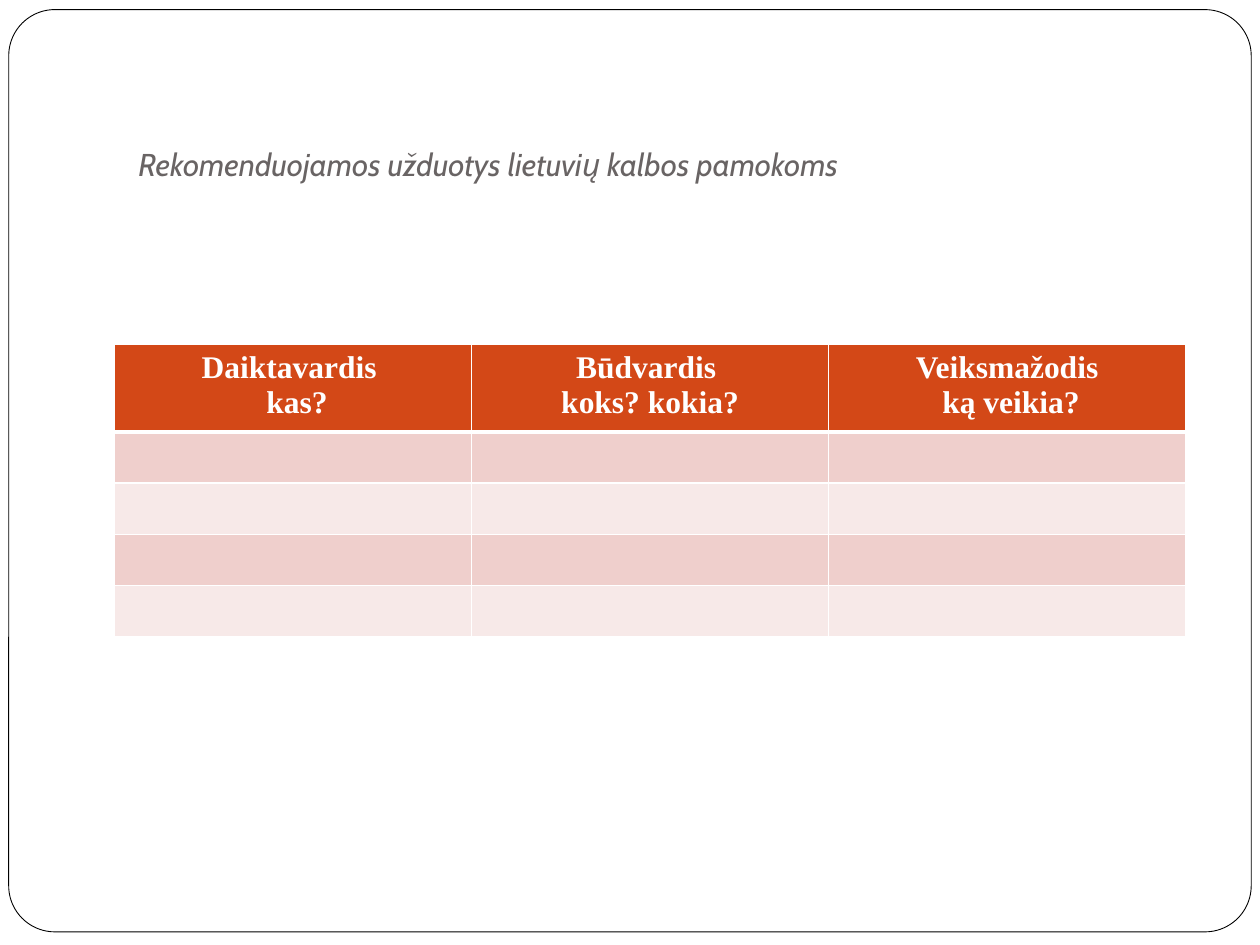
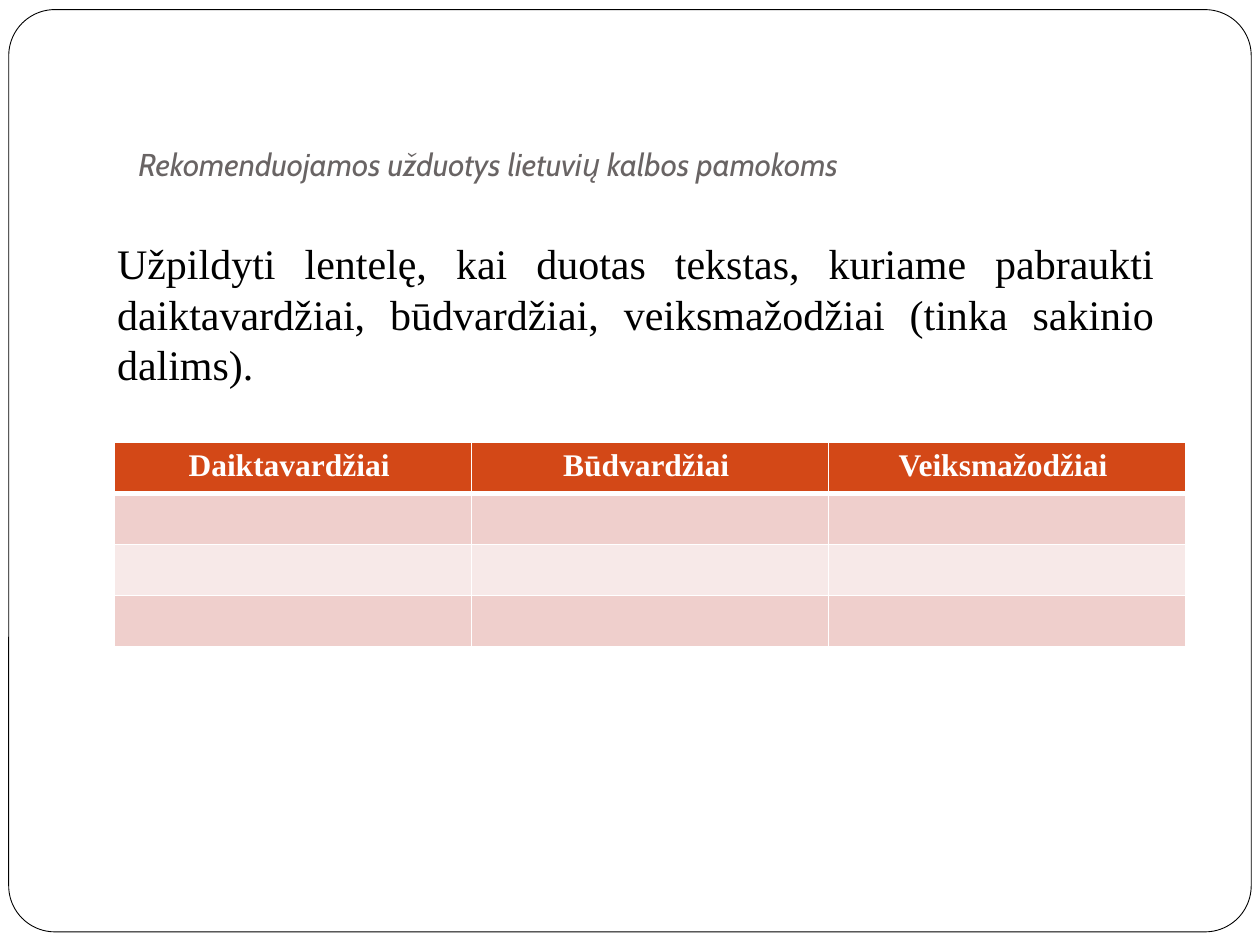
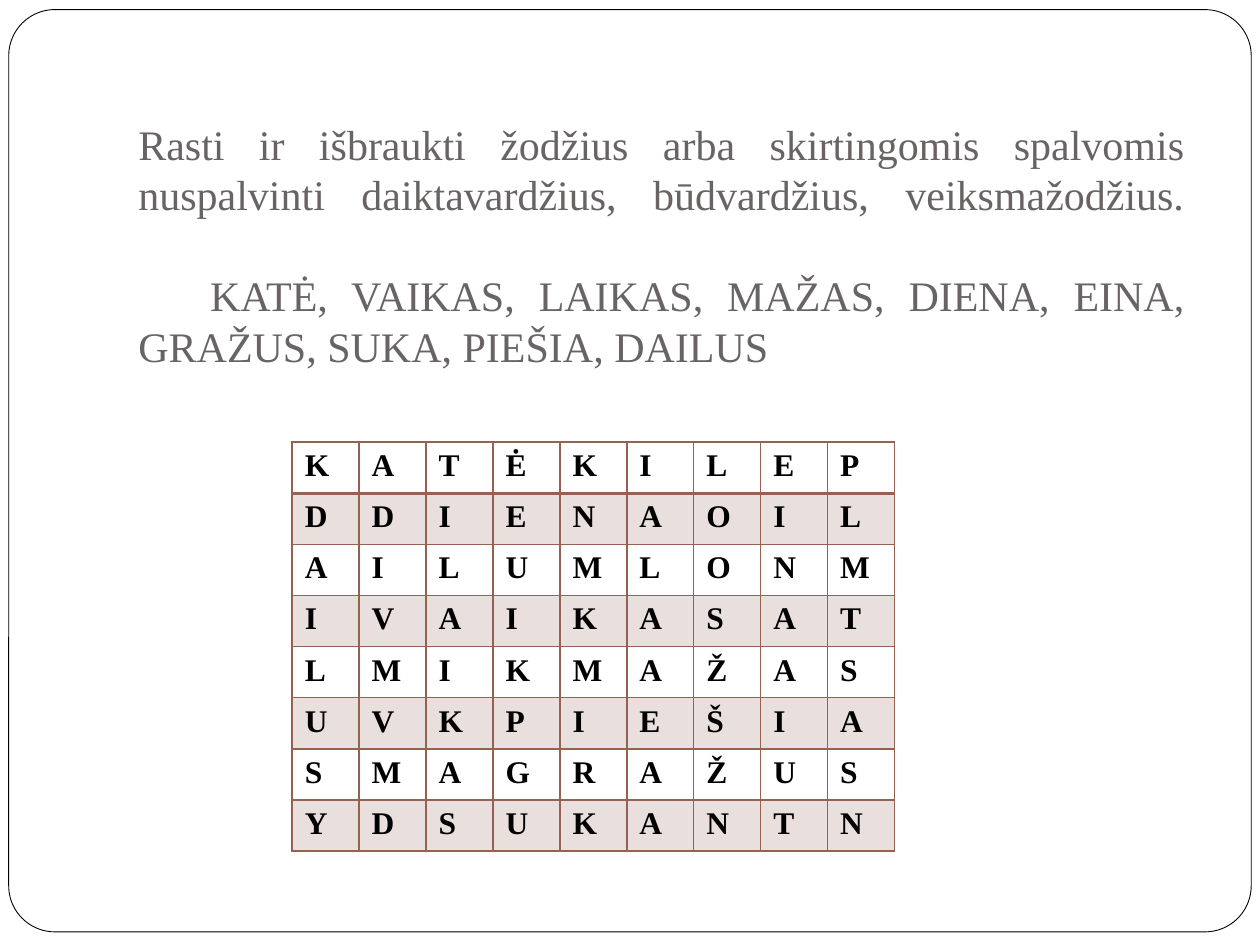
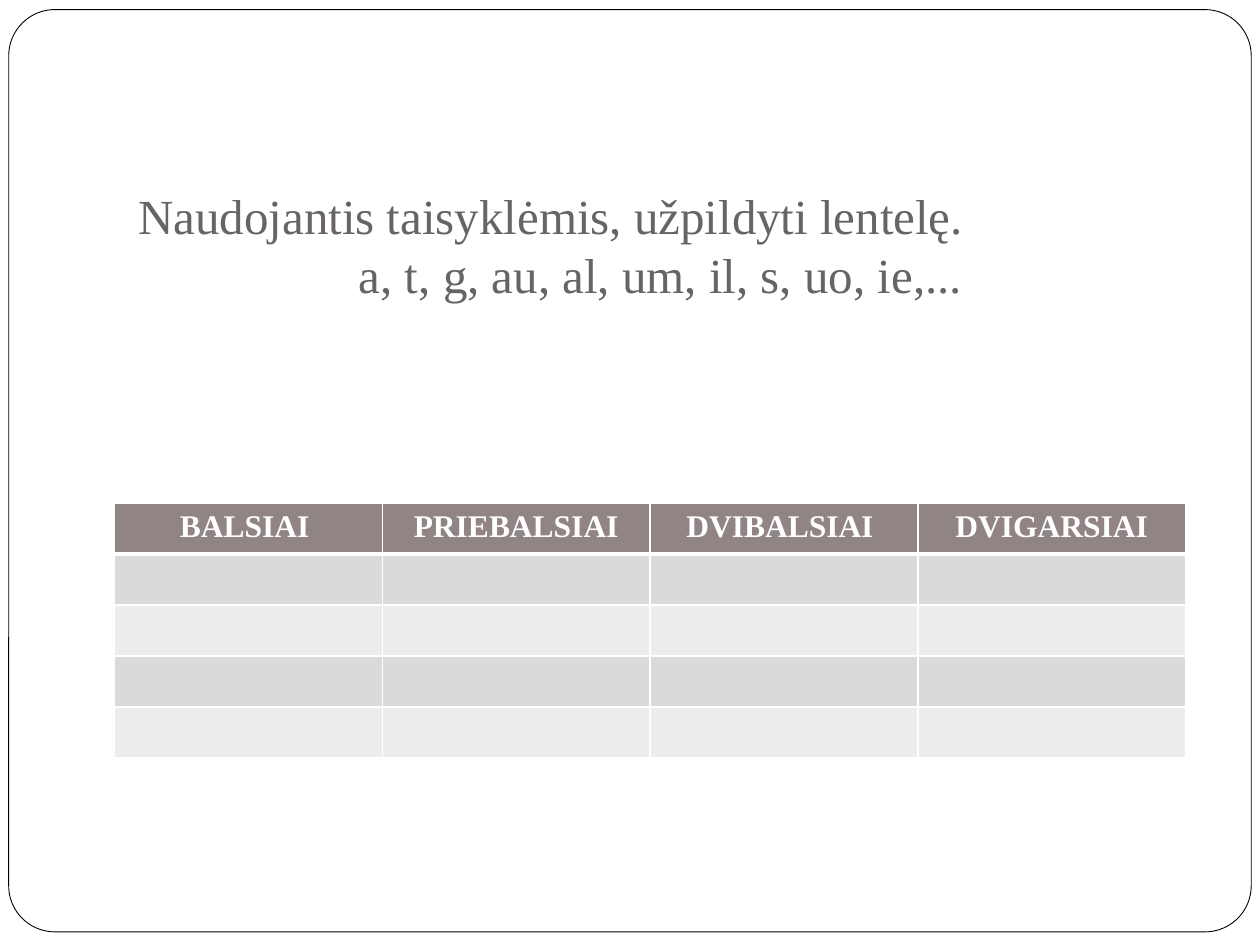
"""Four Lithuanian grammar exercise slides with titles and tables."""
from copy import deepcopy

from pptx import Presentation
from pptx import util as u
from pptx.dml.color import RGBColor
from pptx.enum import shapes, text
from pptx.oxml import ns, xmlchemy

Pt = u.Pt
AL = text.PP_ALIGN
SERIF = "Times New Roman"
COLORS = {
    "white": "FFFFFF", "black": "000000", "title": "696464",
    "orange": "D34817", "rose": "EFCFCC", "pale_rose": "F7E9E8",
    "taupe": "918485", "gray": "DCD9D9", "pale_gray": "EEEDED",
    "brown": "956251",
}
THEMES = {
    "orange": ("orange", "rose", "pale_rose"),
    "taupe": ("taupe", "gray", "pale_gray"),
}
TITLE = {"name": "Cabin", "size": Pt(18), "italic": True}
BODY = {"name": SERIF, "size": Pt(24)}
LARGE = {"name": SERIF, "size": Pt(28)}
CELL = {"name": SERIF, "size": Pt(18), "bold": True}
ROW_H = 29.2
TABLE_X, TABLE_W = 65.5, 612
TITLE_X, TITLE_Y, TITLE_W = 72, 21.6, 612
RECOMMENDED = "Rekomenduojamos užduotys lietuvių kalbos pamokoms"
LETTERS = ["KATĖKILEP", "DDIENAOIL", "AILUMLONM", "IVAIKASAT",
           "LMIKMAŽAS", "UVKPIEŠIA", "SMAGRAŽUS", "YDSUKANTN"]


def rgb(key):
    """Return the named colour."""
    return RGBColor.from_string(COLORS[key])


def style(obj, values):
    """Set each attribute of obj from a dict."""
    for key, value in values.items():
        setattr(obj, key, value)


def format_text(tf, fmt, color, align):
    """Format every run, line break and paragraph end of a text frame."""
    for p in tf.paragraphs:
        p.alignment = align
        for r in p.runs:
            style(r.font, fmt)
            r.font.color.rgb = rgb(color)
            for br in p._p.findall(ns.qn("a:br")):
                br.append(deepcopy(r._r.rPr))
            end = deepcopy(r._r.rPr)
            end.tag = ns.qn("a:endParaRPr")
        if p.runs:
            p._p.append(end)


def add_text(s, box, content, fmt, color, align=AL.LEFT, frame=None, indent=0):
    """Add a text box, indenting the first line of its last paragraph."""
    tf = s.shapes.add_textbox(*map(Pt, box)).text_frame
    style(tf, {"word_wrap": True, **(frame or {})})
    tf.text = content
    format_text(tf, fmt, color, align)
    if indent:
        tf.paragraphs[-1]._p.get_or_add_pPr().set("indent", str(Pt(indent)))


def add_title(s, height, content, fmt, align=AL.LEFT, bottom=7.2, indent=0):
    """Add a bottom-anchored title box."""
    frame = {"vertical_anchor": text.MSO_ANCHOR.BOTTOM, "margin_bottom": Pt(bottom)}
    add_text(s, (TITLE_X, TITLE_Y, TITLE_W, height), content, fmt, "title",
             align, frame, indent)


def set_borders(cell, color, widths):
    """Draw cell borders; widths maps a side letter to points."""
    tc_pr = cell._tc.get_or_add_tcPr()
    for i, side in enumerate("LRTB"):
        ln = xmlchemy.OxmlElement(f"a:ln{side}")
        ln.set("w", str(Pt(widths[side])))
        fill = xmlchemy.OxmlElement("a:solidFill")
        clr = xmlchemy.OxmlElement("a:srgbClr")
        clr.set("val", COLORS[color])
        fill.append(clr)
        ln.append(fill)
        tc_pr.insert(i, ln)


def fill_cell(cell, color, alpha=None):
    """Fill a cell, or leave it clear when no colour is given."""
    if color is None:
        cell.fill.background()
        return
    cell.fill.solid()
    cell.fill.fore_color.rgb = rgb(color)
    if alpha:
        node = xmlchemy.OxmlElement("a:alpha")
        node.set("val", str(alpha * 1000))
        next(cell._tc.tcPr.iter(ns.qn("a:srgbClr"))).append(node)


def add_grid(s, box, rows, paint, ink, align, border, rule, head_h=ROW_H):
    """Add a table whose first row ends in a rule of the given width."""
    left, top, width = box
    height = head_h + ROW_H * (len(rows) - 1)
    table = s.shapes.add_table(len(rows), len(rows[0]), Pt(left), Pt(top),
                               Pt(width), Pt(height)).table
    style(table, {"first_row": False, "horz_banding": False})
    for col in table.columns:
        col.width = Pt(width / len(rows[0]))
    for i, row in enumerate(rows):
        table.rows[i].height = Pt(ROW_H if i else head_h)
        for j, content in enumerate(row):
            cell = table.cell(i, j)
            cell.text = content
            format_text(cell.text_frame, CELL, ink, align)
            fill_cell(cell, *paint(i))
            set_borders(cell, border, {"L": 1, "R": 1,
                                       "T": rule if i == 1 else 1,
                                       "B": rule if i == 0 else 1})


def add_form(s, top, heads, blank_rows, theme, head_h=ROW_H):
    """Add a fill-in table with a coloured header and banded empty rows."""
    head, odd, even = THEMES[theme]
    rows = [heads] + [[""] * len(heads)] * blank_rows
    add_grid(s, (TABLE_X, top, TABLE_W), rows,
             lambda i: ((odd if i % 2 else even) if i else head,),
             "white", AL.CENTER, "white", 3, head_h)


def add_letters(s, box):
    """Add the word-search grid."""
    add_grid(s, box, LETTERS, lambda i: ("brown", 20) if i % 2 else (None,),
             "black", AL.LEFT, "brown", 2)


def new_slide(prs):
    """Add a blank slide with the rounded frame."""
    s = prs.slides.add_slide(prs.slide_layouts[6])
    sp = s.shapes.add_shape(shapes.MSO_SHAPE.ROUNDED_RECTANGLE,
                            Pt(5), Pt(5.5), Pt(710), Pt(527))
    sp.adjustments[0] = 0.05
    sp.shadow.inherit = False
    sp.fill.solid()
    sp.fill.fore_color.rgb = rgb("white")
    sp.line.color.rgb = rgb("black")
    sp.line.width = Pt(0.5)
    return s


def slide_questions(prs):
    """Build the table of word classes and their questions."""
    s = new_slide(prs)
    add_title(s, 90, RECOMMENDED, TITLE)
    add_form(s, 196.5, ["Daiktavardis \n kas?", "Būdvardis \nkoks? kokia?",
                        "Veiksmažodis\n ką veikia?"], 4, "orange", 46.8)


def slide_word_classes(prs):
    """Build the table to fill in from a given text."""
    s = new_slide(prs)
    add_title(s, 90, RECOMMENDED, TITLE)
    add_form(s, 252.7, ["Daiktavardžiai ", "Būdvardžiai ", "Veiksmažodžiai "],
             3, "orange")
    add_text(s, (59.8, 131.8, 607, 94.3),
             "Užpildyti lentelę, kai duotas tekstas, kuriame pabraukti "
             "daiktavardžiai, būdvardžiai, veiksmažodžiai (tinka sakinio dalims).",
             BODY, "black", AL.JUSTIFY,
             {"vertical_anchor": text.MSO_ANCHOR.MIDDLE})


def slide_word_search(prs):
    """Build the word search."""
    s = new_slide(prs)
    add_title(s, 197.3,
              "Rasti ir išbraukti žodžius arba skirtingomis spalvomis nuspalvinti "
              "daiktavardžius, būdvardžius, veiksmažodžius.\v\n"
              "KATĖ, VAIKAS, LAIKAS, MAŽAS, DIENA, EINA, GRAŽUS, SUKA, PIEŠIA, DAILUS",
              BODY, AL.JUSTIFY, indent=41)
    add_letters(s, (167, 252.7, 344.4))


def slide_sounds(prs):
    """Build the table of sounds."""
    s = new_slide(prs)
    add_title(s, 191.5, "Naudojantis taisyklėmis, užpildyti lentelę.\n"
              "a, t, g, au, al, um, il, s, uo, ie,...", LARGE, bottom=40, indent=126)
    add_form(s, 287.3, ["BALSIAI ", "PRIEBALSIAI", "DVIBALSIAI ", "DVIGARSIAI"],
             4, "taupe")


def main():
    """Build and save the presentation."""
    prs = Presentation()
    style(prs, {"slide_width": Pt(720), "slide_height": Pt(540)})
    for build in (slide_questions, slide_word_classes, slide_word_search, slide_sounds):
        build(prs)
    prs.save("out.pptx")


if __name__ == "__main__":
    main()
